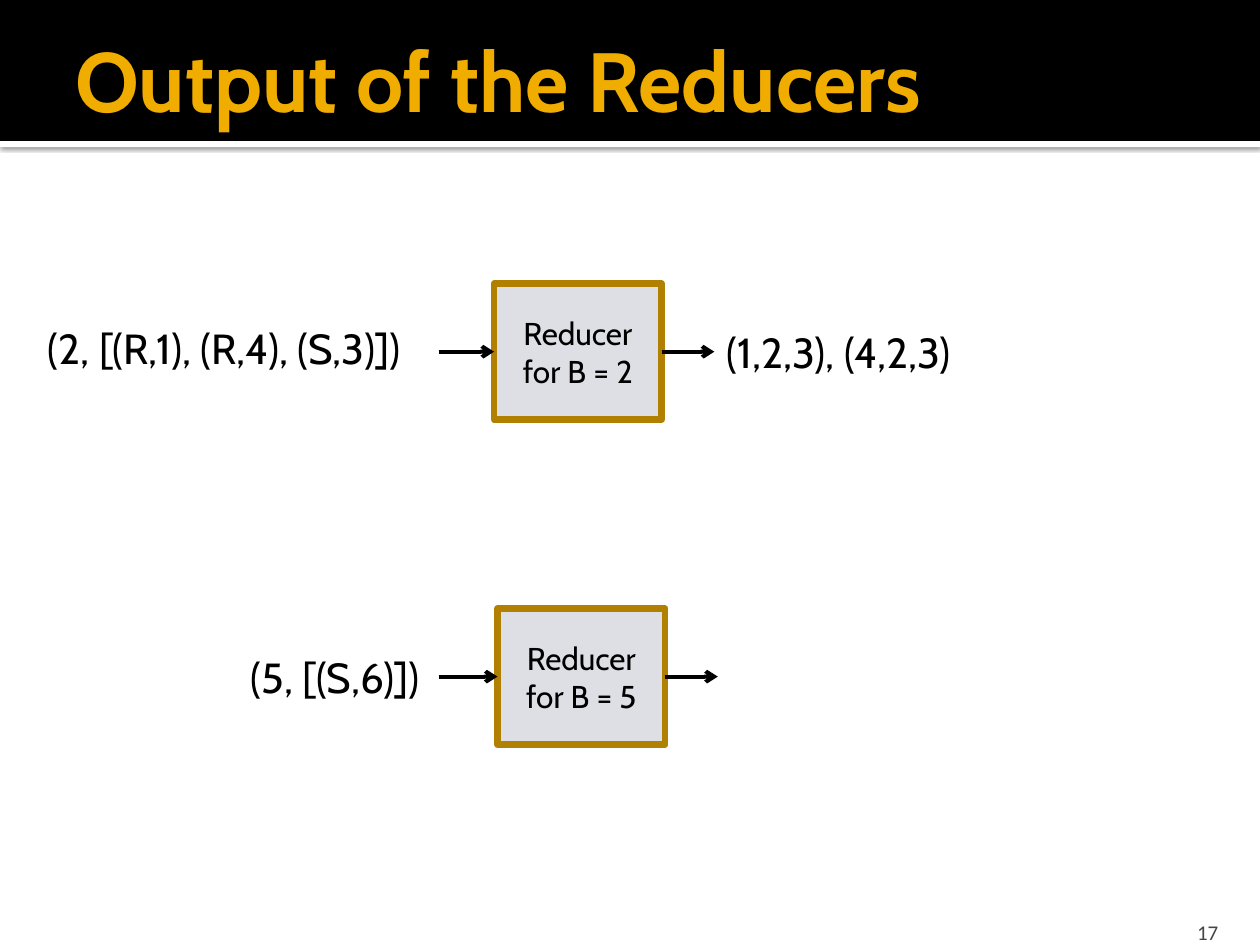
from dataclasses import dataclass

from lxml.etree import SubElement
from pptx import Presentation
from pptx.dml.color import RGBColor
from pptx.enum.shapes import MSO_CONNECTOR as Connector, MSO_SHAPE as Preset
from pptx.enum.text import MSO_ANCHOR as Anchor, MSO_AUTO_SIZE as AutoSize, PP_ALIGN as Align
from pptx.oxml.ns import qn
from pptx.util import Cm, Pt

COLOURS = {
    "header": "000000",
    "strip": "FFFFFF",
    "title": "F0AD00",
    "number": "454545",
    "ink": "000000",
    "box": "DDDFE5",
    "border": "B28000",
}
SLIDE_WIDTH, SLIDE_HEIGHT = 25.4, 19.05
HEADER_HEIGHT, STRIP_HEIGHT = 2.84, 0.13
BOX_WIDTH, BOX_HEIGHT = 3.38, 2.74
INPUT_ARROW_START, OUTPUT_ARROW_LENGTH = 8.84, 1.06
LABEL_HEIGHT = 1.27


@dataclass
class Label:
    text: str
    left: float
    top: float
    width: float


@dataclass
class Reducer:
    key: int
    left: float
    top: float
    labels: list[Label]


REDUCERS = [
    Reducer(2, 9.96, 5.72, [
        Label("(2, [(R,1), (R,4), (S,3)])", 0.71, 6.38, 8.1),
        Label("(1,2,3), (4,2,3)", 14.4, 6.45, 5.33),
    ]),
    Reducer(5, 10.03, 12.27, [Label("(5, [(S,6)])", 4.8, 13, 4.04)]),
]


def colour(name: str) -> RGBColor:
    """Return the named colour."""
    return RGBColor.from_string(COLOURS[name])


def write(frame, text: str, size: float, ink: str, font: str = "Cabin",
          align=Align.LEFT, bold: bool = False) -> None:
    """Fill a text frame and format every run alike."""
    frame.text = text
    for paragraph in frame.paragraphs:
        paragraph.alignment = align
        for run in paragraph.runs:
            run.font.name = font
            run.font.size = Pt(size)
            run.font.bold = bold
            run.font.color.rgb = colour(ink)


def add_rectangle(slide, left: float, top: float, width: float, height: float, fill: str):
    """Add a plain rectangle without outline or shadow."""
    rectangle = slide.shapes.add_shape(Preset.RECTANGLE, Cm(left), Cm(top), Cm(width), Cm(height))
    rectangle.shadow.inherit = False
    rectangle.fill.solid()
    rectangle.fill.fore_color.rgb = colour(fill)
    rectangle.line.fill.background()
    return rectangle


def add_strip_shadow(strip) -> None:
    """Cast a soft shadow below the strip."""
    effects = strip.element.spPr.find(qn("a:effectLst"))
    shadow = SubElement(effects, qn("a:outerShdw"), blurRad=str(Pt(2.5)), dist=str(Pt(0.8)),
                        dir="5400000", algn="tl", rotWithShape="0")
    ink = SubElement(shadow, qn("a:srgbClr"), val=COLOURS["ink"])
    SubElement(ink, qn("a:alpha"), val="60000")


def add_header(slide) -> None:
    """Draw the header band, its strip and the title."""
    add_strip_shadow(add_rectangle(slide, 0, HEADER_HEIGHT, SLIDE_WIDTH, STRIP_HEIGHT, "strip"))
    add_rectangle(slide, 0, 0, SLIDE_WIDTH, HEADER_HEIGHT, "header")
    frame = slide.shapes.add_textbox(Cm(1.27), Cm(0.43), Cm(23.37), Cm(2.34)).text_frame
    frame.word_wrap = True
    frame.vertical_anchor = Anchor.MIDDLE
    frame.margin_right = Cm(0.13)
    write(frame, "Output of the Reducers", 48, "title", bold=True)


def add_page_number(slide) -> None:
    """Write the page number at the lower right."""
    frame = slide.shapes.add_textbox(Cm(22.78), Cm(18.29), Cm(2.03), Cm(0.76)).text_frame
    frame.word_wrap = True
    frame.vertical_anchor = Anchor.BOTTOM
    frame.margin_bottom = 0
    write(frame, "17", 12, "number", "Calibri", Align.RIGHT)


def add_label(slide, label: Label) -> None:
    """Write one list of tuples on a single line."""
    frame = slide.shapes.add_textbox(
        Cm(label.left), Cm(label.top), Cm(label.width), Cm(LABEL_HEIGHT)).text_frame
    frame.word_wrap = False
    frame.auto_size = AutoSize.SHAPE_TO_FIT_TEXT
    write(frame, label.text, 24, "ink")


def add_arrow(slide, start: float, end: float, level: float):
    """Add a horizontal arrow pointing right."""
    arrow = slide.shapes.add_connector(
        Connector.STRAIGHT, Cm(start), Cm(level), Cm(end), Cm(level))
    arrow.line.color.rgb = colour("ink")
    arrow.line.width = Pt(2.25)
    SubElement(arrow.line._get_or_add_ln(), qn("a:tailEnd"), type="arrow")
    SubElement(arrow._element.spPr, qn("a:effectLst"))
    return arrow


def add_reducer(slide, reducer: Reducer) -> None:
    """Draw a reducer with its arrows and labels."""
    box = add_rectangle(slide, reducer.left, reducer.top, BOX_WIDTH, BOX_HEIGHT, "box")
    box.line.color.rgb = colour("border")
    box.line.width = Pt(3.78)
    box.text_frame.vertical_anchor = Anchor.MIDDLE
    write(box.text_frame, f"Reducer\nfor B = {reducer.key}", 18, "ink", align=Align.CENTER)
    level = reducer.top + BOX_HEIGHT / 2
    right = reducer.left + BOX_WIDTH
    add_arrow(slide, INPUT_ARROW_START, reducer.left, level).end_connect(box, 1)
    add_arrow(slide, right, right + OUTPUT_ARROW_LENGTH, level).begin_connect(box, 3)
    for label in reducer.labels:
        add_label(slide, label)


def main() -> None:
    """Build and save the slide."""
    presentation = Presentation()
    presentation.slide_width = Cm(SLIDE_WIDTH)
    presentation.slide_height = Cm(SLIDE_HEIGHT)
    slide = presentation.slides.add_slide(presentation.slide_layouts[6])
    add_header(slide)
    add_page_number(slide)
    for reducer in REDUCERS:
        add_reducer(slide, reducer)
    presentation.save("out.pptx")


if __name__ == "__main__":
    main()
